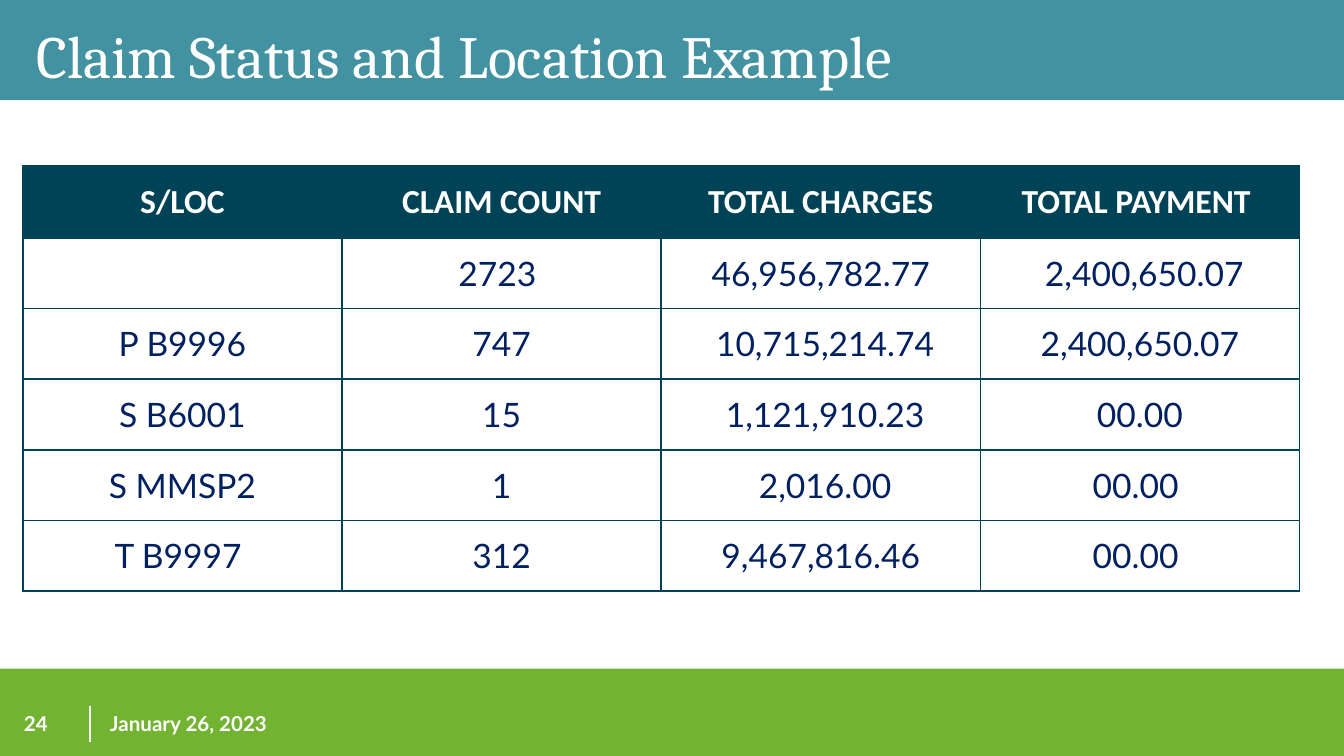
from dataclasses import dataclass

from lxml.etree import SubElement
from pptx import Presentation
from pptx.dml.color import RGBColor as Color
from pptx.enum.shapes import MSO_CONNECTOR as Connector, MSO_SHAPE as Shape
from pptx.enum.text import MSO_ANCHOR as Anchor, PP_ALIGN as Align
from pptx.oxml.ns import qn
from pptx.util import Inches, Pt

# Content
TITLE = "Claim Status and Location Example"
PAGE_NUMBER = "24"
DATE = "January 26, 2023"
HEADERS = ["S/LOC", "CLAIM COUNT", "TOTAL CHARGES", "TOTAL PAYMENT "]
CLAIMS = [
    ["", "2723 ", " 46,956,782.77 ", " 2,400,650.07"],
    [" P B9996 ", "747", " 10,715,214.74", " 2,400,650.07 "],
    [" S B6001 ", "15", " 1,121,910.23", " 00.00 "],
    ["S MMSP2", "1", " 2,016.00", "00.00 "],
    ["T B9997 ", "312", " 9,467,816.46 ", "00.00 "],
]


@dataclass(frozen=True)
class Theme:
    green: str = "72B431"
    teal: str = "4392A2"
    navy: str = "004357"
    ink: str = "002060"
    white: str = "FFFFFF"
    title_font: str = "Cambria"
    header_font: str = "Calibri"
    body_font: str = "Lato"
    title_size: int = 32
    table_size: int = 18
    footer_size: int = 11


theme = Theme()

# Layout, in inches, on a 16:9 slide
WIDTH = 10
HEIGHT = WIDTH * 9 / 16
TITLE_BAND, FOOTER_BAND = 0.73, 0.65
MARGIN = 0.17
TABLE_TOP, TABLE_WIDTH, TABLE_HEIGHT = 1.23, 9.5, 3.17
HEADER_ROW = 0.54
CLAIM_ROW = (TABLE_HEIGHT - HEADER_ROW) / len(CLAIMS)
FOOTER_TOP, FOOTER_HEIGHT, DIVIDER = 5.25, 0.27, 0.67

presentation = Presentation()
presentation.slide_width, presentation.slide_height = Inches(WIDTH), Inches(HEIGHT)
slide = presentation.slides.add_slide(presentation.slide_layouts[6])


def style_text(text_frame, font, size, color, bold=False, align=Align.LEFT):
    for paragraph in text_frame.paragraphs:
        paragraph.alignment = align
        # The paragraph font sizes an empty cell, the run fonts the words
        for item in (paragraph, *paragraph.runs):
            item.font.name = font
            item.font.size = Pt(size)
            item.font.bold = bold
            item.font.color.rgb = Color.from_string(color)


def add_band(top, height, color):
    band = slide.shapes.add_shape(
        Shape.RECTANGLE, 0, Inches(top), Inches(WIDTH), Inches(height))
    band.shadow.inherit = False
    band.fill.solid()
    band.fill.fore_color.rgb = Color.from_string(color)
    band.line.fill.background()
    return band


def add_text(text, left, top, width, height, *style):
    box = slide.shapes.add_textbox(*map(Inches, (left, top, width, height)))
    text_frame = box.text_frame
    text_frame.word_wrap = True
    text_frame.vertical_anchor = Anchor.MIDDLE
    text_frame.text = text
    style_text(text_frame, *style)
    return text_frame


def add_borders(cell, color, width):
    properties = cell._tc.get_or_add_tcPr()
    for position, side in enumerate(("lnL", "lnR", "lnT", "lnB")):
        line = properties.makeelement(qn(f"a:{side}"), {"w": str(Pt(width))})
        fill = SubElement(line, qn("a:solidFill"))
        SubElement(fill, qn("a:srgbClr"), val=color)
        properties.insert(position, line)  # borders come before the fill


# Bands
add_band(HEIGHT - FOOTER_BAND, FOOTER_BAND, theme.green)
title_band = add_band(0, TITLE_BAND, theme.teal)
title_band.line.color.rgb = Color.from_string(theme.teal)
title_band.line.width = Pt(2)

# Footer
divider = slide.shapes.add_connector(
    Connector.STRAIGHT, Inches(DIVIDER), Inches(FOOTER_TOP),
    Inches(DIVIDER), Inches(FOOTER_TOP + FOOTER_HEIGHT))
divider.line.color.rgb = Color.from_string(theme.white)
divider.line.width = Pt(1)
SubElement(divider._element.spPr, qn("a:effectLst"))
for text, left, width in [(PAGE_NUMBER, 0.08, 0.61), (DATE, 0.72, 2)]:
    add_text(text, left, FOOTER_TOP, width, FOOTER_HEIGHT,
             theme.body_font, theme.footer_size, theme.white, True)

# Title, set slightly below the middle of its box
title = add_text(TITLE, MARGIN, -0.15, WIDTH - 2 * MARGIN, 1.04,
                 theme.title_font, theme.title_size, theme.white)
title.margin_top = Inches(0.13)

# Claims table
rows = [HEADERS] + CLAIMS
table = slide.shapes.add_table(
    len(rows), len(HEADERS), Inches(MARGIN), Inches(TABLE_TOP),
    Inches(TABLE_WIDTH), Inches(TABLE_HEIGHT)).table
table.horz_banding = False
for column in table.columns:
    column.width = Inches(TABLE_WIDTH / len(HEADERS))

for row_index, values in enumerate(rows):
    is_header = row_index == 0
    table.rows[row_index].height = Inches(HEADER_ROW if is_header else CLAIM_ROW)
    for column_index, value in enumerate(values):
        cell = table.cell(row_index, column_index)
        cell.text_frame.text = value
        cell.vertical_anchor = Anchor.MIDDLE
        if is_header:
            cell.fill.solid()
            cell.fill.fore_color.rgb = Color.from_string(theme.navy)
            font, color = theme.header_font, theme.white
        else:
            cell.fill.background()
            font, color = theme.body_font, theme.ink
        style_text(cell.text_frame, font, theme.table_size, color, is_header, Align.CENTER)
        add_borders(cell, theme.navy, 1)

presentation.save("out.pptx")
